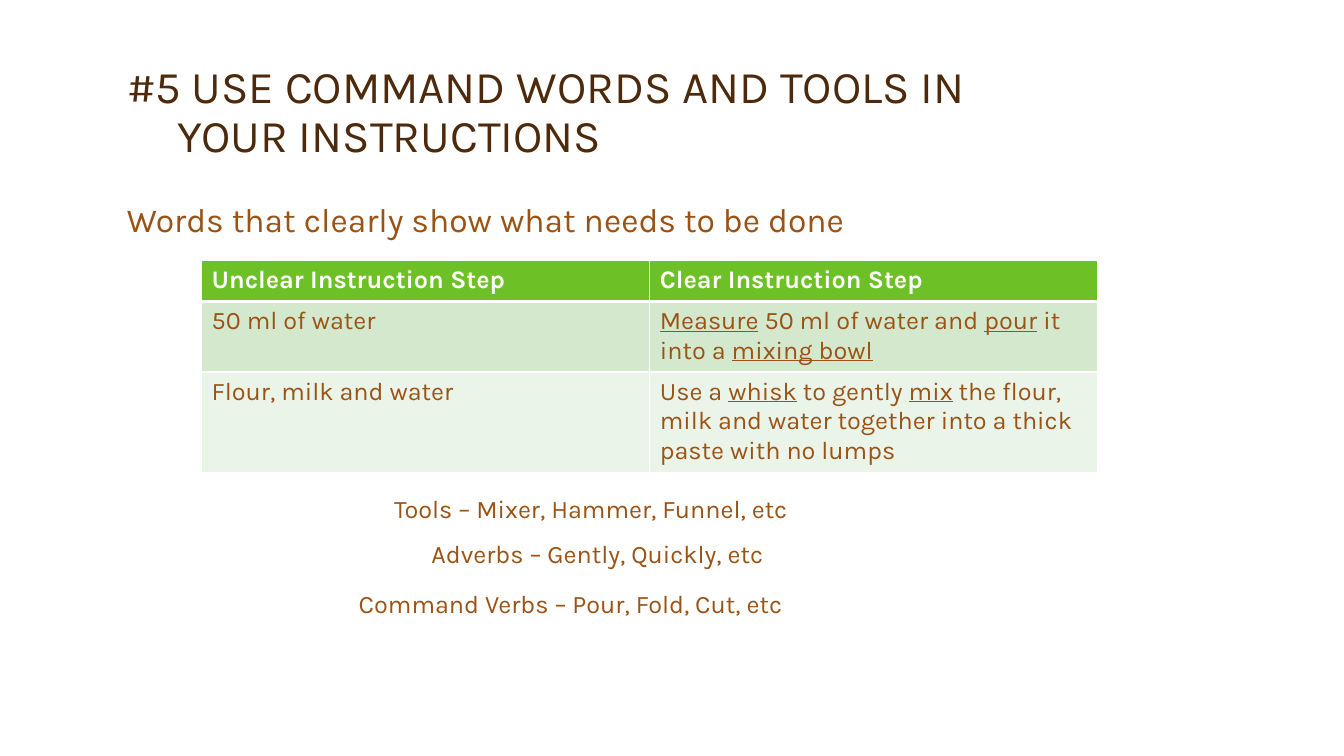
from copy import deepcopy

from lxml.etree import SubElement
from pptx import Presentation
from pptx.dml.color import RGBColor as RGB
from pptx.enum.text import MSO_ANCHOR as Anchor, MSO_AUTO_SIZE as Fit, PP_ALIGN as Align
from pptx.oxml.ns import qn
from pptx.util import Inches, Pt

BROWN, DARK, WHITE, GREEN = "9A5315", "4D2A0B", "FFFFFF", "6DC025"
BANDS = ["D4E8CD", "EBF4E8"]


def color(code):
    return RGB.from_string(code)


class Page:
    font = "Karla"

    def __init__(self, deck):
        self.slide = deck.slides.add_slide(deck.slide_layouts[5])

    def run(self, para, text, size, code, bold=False, under=False):
        run = para.add_run()
        run.text = text
        font = run.font
        font.name, font.size = self.font, Pt(size)
        font.bold, font.underline = bold, under
        font.color.rgb = color(code)
        return run

    def title(self, lines, box, size):
        shape = self.slide.shapes.title
        shape.left, shape.top, shape.width, shape.height = map(Inches, box)
        frame = shape.text_frame
        frame.word_wrap, frame.auto_size = True, Fit.NONE
        frame.vertical_anchor = Anchor.BOTTOM
        para = frame.paragraphs[0]
        para.alignment, para.line_spacing = Align.LEFT, 0.9
        first, *rest = lines
        run = self.run(para, first, size, DARK)
        for line in rest:
            para.add_line_break()
            # The break takes the run's size, so that the line keeps its height
            para._p[-1].append(deepcopy(run.font._element))
            run = self.run(para, line, size, DARK)

    def text(self, words, box, size=18):
        frame = self.slide.shapes.add_textbox(*map(Inches, box)).text_frame
        frame.word_wrap = True
        self.run(frame.paragraphs[0], words, size, BROWN)

    def border(self, cell, bottom):
        """Draw white cell edges; bottom is the lower edge's width in points."""
        props = cell._tc.get_or_add_tcPr()
        edges = zip(("lnL", "lnR", "lnT", "lnB"), (1, 1, 1, bottom))
        for spot, (tag, width) in enumerate(edges):
            line = SubElement(props, qn(f"a:{tag}"), w=str(Pt(width)))
            fill = SubElement(line, qn("a:solidFill"))
            SubElement(fill, qn("a:srgbClr"), val=WHITE)
            props.insert(spot, line)

    def table(self, rows, box, heights):
        """Each cell is a list of parts; every second part is underlined."""
        frame = self.slide.shapes.add_table(len(rows), len(rows[0]), *map(Inches, box))
        table = frame.table
        for r, (row, height) in enumerate(zip(rows, heights)):
            table.rows[r].height = Inches(height)
            head = r == 0
            for c, parts in enumerate(row):
                cell = table.cell(r, c)
                cell.fill.solid()
                cell.fill.fore_color.rgb = color(GREEN if head else BANDS[(r - 1) % 2])
                self.border(cell, 3 if head else 1)
                para = cell.text_frame.paragraphs[0]
                for n, part in enumerate(parts):
                    if part:
                        self.run(para, part, 18, WHITE if head else BROWN, head, n % 2 == 1)


def main():
    deck = Presentation()
    deck.slide_width, deck.slide_height = Inches(13.33), Inches(7.5)
    page = Page(deck)
    page.title(["#5 USE COMMAND WORDS AND TOOLS IN", "\tYOUR INSTRUCTIONS"],
               (1.16, 0.33, 11, 1.33), 32.4)
    page.text("Words that clearly show what needs to be done", (1.16, 1.92, 11, 4.62), 24)
    page.table([
        [["Unclear Instruction Step"], ["Clear Instruction Step"]],
        [["50 ml of water"],
         ["", "Measure", " 50 ml of water and ", "pour", " it into a ", "mixing bowl"]],
        [["Flour, milk and water"],
         ["Use a ", "whisk", " to gently ", "mix",
          " the flour, milk and water together into a thick paste with no lumps"]],
    ], (2, 2.58, 8.89, 2.07), [0.41, 0.68, 0.98])
    for words, left, top, width in [
        ("Tools – Mixer, Hammer, Funnel, etc", 3.81, 4.84, 6.62),
        ("Adverbs – Gently, Quickly, etc", 4.18, 5.29, 6.72),
        ("Command Verbs – Pour, Fold, Cut, etc", 3.46, 5.79, 8.17),
    ]:
        page.text(words, (left, top, width, 0.4))
    deck.save("out.pptx")


if __name__ == "__main__":
    main()
